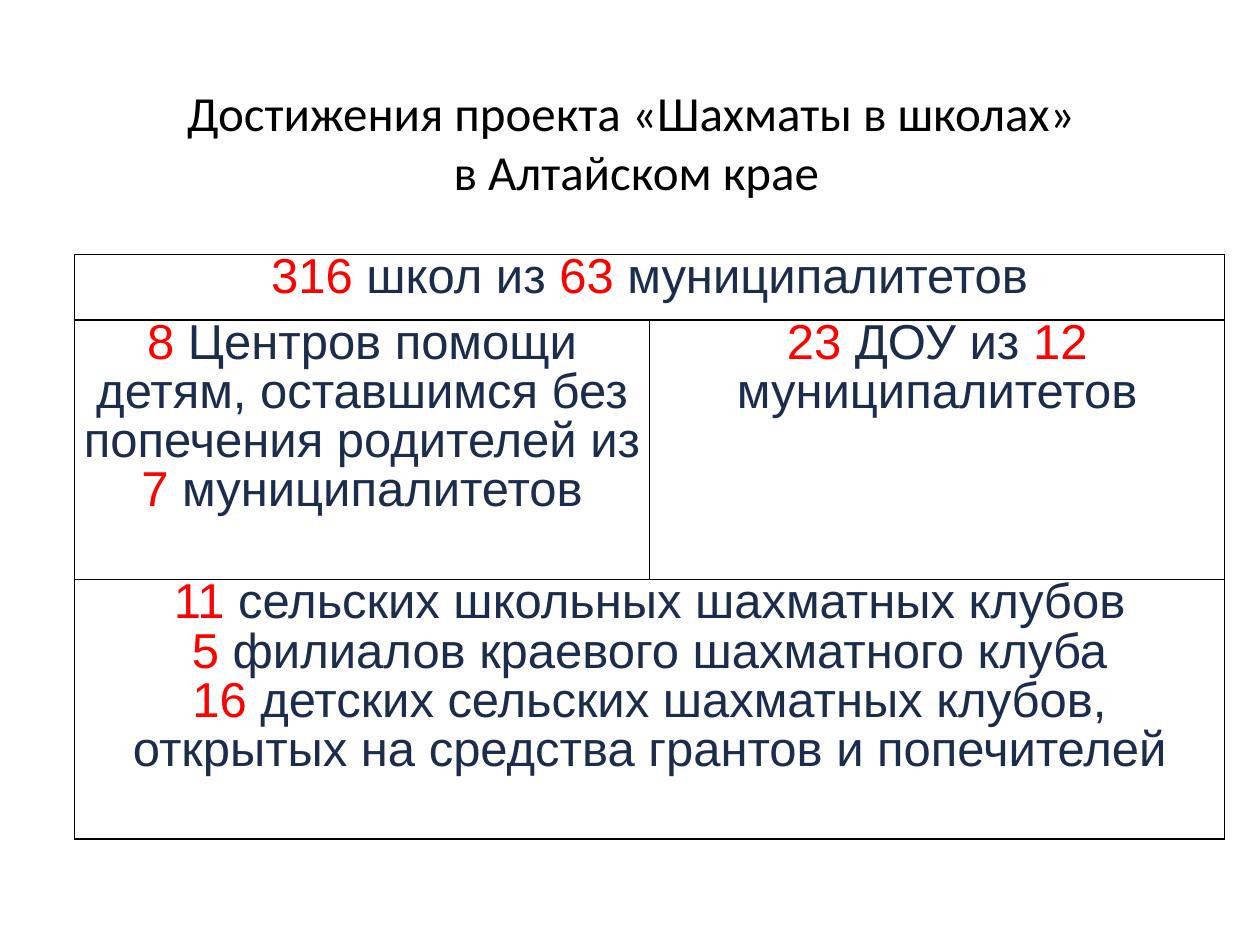
from lxml.etree import SubElement as Sub
from pptx import Presentation
from pptx.dml.color import RGBColor
from pptx.enum.text import MSO_ANCHOR as Anchor, PP_ALIGN as Align
from pptx.oxml.ns import qn
from pptx.util import Inches, Pt

RED, NAVY, BLACK = "FF0000", "1B2C4C", "000000"


def paint(font, name, color):
    """Set the face, size and colour of a font."""
    font.name, font.size, font.bold = name, Pt(28), False
    font.color.rgb = RGBColor.from_string(color)


def add_run(para, text, name, color):
    """Append one styled run to a paragraph."""
    run = para.add_run()
    run.text = text
    paint(run.font, name, color)


def add_title(slide, box, lines):
    """Place the title and write its lines."""
    shape = slide.shapes.title
    shape.left, shape.top, shape.width, shape.height = map(Inches, box)
    frame = shape.text_frame
    frame.word_wrap = True
    frame.vertical_anchor = Anchor.MIDDLE
    para = frame.paragraphs[0]
    para.alignment = Align.CENTER
    for i, line in enumerate(lines):
        if i:
            para.add_line_break()
        add_run(para, line, "Calibri", BLACK)


def style_cell(cell):
    """Give a cell thin borders, no fill and tight margins."""
    props = cell._tc.get_or_add_tcPr()
    for side in ("a:lnL", "a:lnR", "a:lnT", "a:lnB"):
        line = Sub(props, qn(side), w=str(Pt(1)))
        Sub(Sub(line, qn("a:solidFill")), qn("a:srgbClr"), val=BLACK)
    cell.fill.background()
    cell.margin_left = cell.margin_right = Inches(0.07)
    cell.margin_top = cell.margin_bottom = 0


def fill_cell(cell, paras):
    """Write paragraphs whose runs alternate between red and navy."""
    frame = cell.text_frame
    for i, parts in enumerate(paras):
        para = frame.add_paragraph() if i else frame.paragraphs[0]
        para.alignment = Align.CENTER
        para.line_spacing = 0.9
        for j, part in enumerate(parts):
            add_run(para, part, "Arial", NAVY if j % 2 else RED)


def add_grid(slide, box, highs, cells):
    """Add the table of results, merging rows that hold one cell."""
    cols = max(map(len, cells))
    table = slide.shapes.add_table(len(cells), cols, *map(Inches, box)).table
    table.first_row = table.horz_banding = False
    for col in table.columns:
        col.width = Inches(box[2] / cols)
    for r, (high, row) in enumerate(zip(highs, cells)):
        table.rows[r].height = Inches(high)
        for c in range(cols):
            style_cell(table.cell(r, c))
        if len(row) < cols:
            table.cell(r, 0).merge(table.cell(r, cols - 1))
        for c, paras in enumerate(row):
            fill_cell(table.cell(r, c), paras)


def main():
    """Build the slide and save it."""
    deck = Presentation()
    deck.slide_width, deck.slide_height = Inches(10), Inches(7.5)
    slide = deck.slides.add_slide(deck.slide_layouts[5])
    add_title(slide, (0.92, 0.4, 8.26, 1.45),
              ["Достижения проекта «Шахматы в школах» ", "в Алтайском крае"])
    town = " муниципалитетов"
    add_grid(slide, (0.59, 2.02, 9.13, 4.64), (0.52, 2.06, 2.06), [
        [[["316", " школ из ", "63", town]]],
        [[["8", " Центров помощи детям, оставшимся без попечения родителей из ",
           "7", town]],
         [["23", " ДОУ из ", "12", town]]],
        [[["11", " сельских школьных шахматных клубов"],
          ["5", " филиалов краевого шахматного клуба"],
          ["16", " детских сельских шахматных клубов, "
                 "открытых на средства грантов и попечителей"]]],
    ])
    deck.save("out.pptx")


if __name__ == "__main__":
    main()
